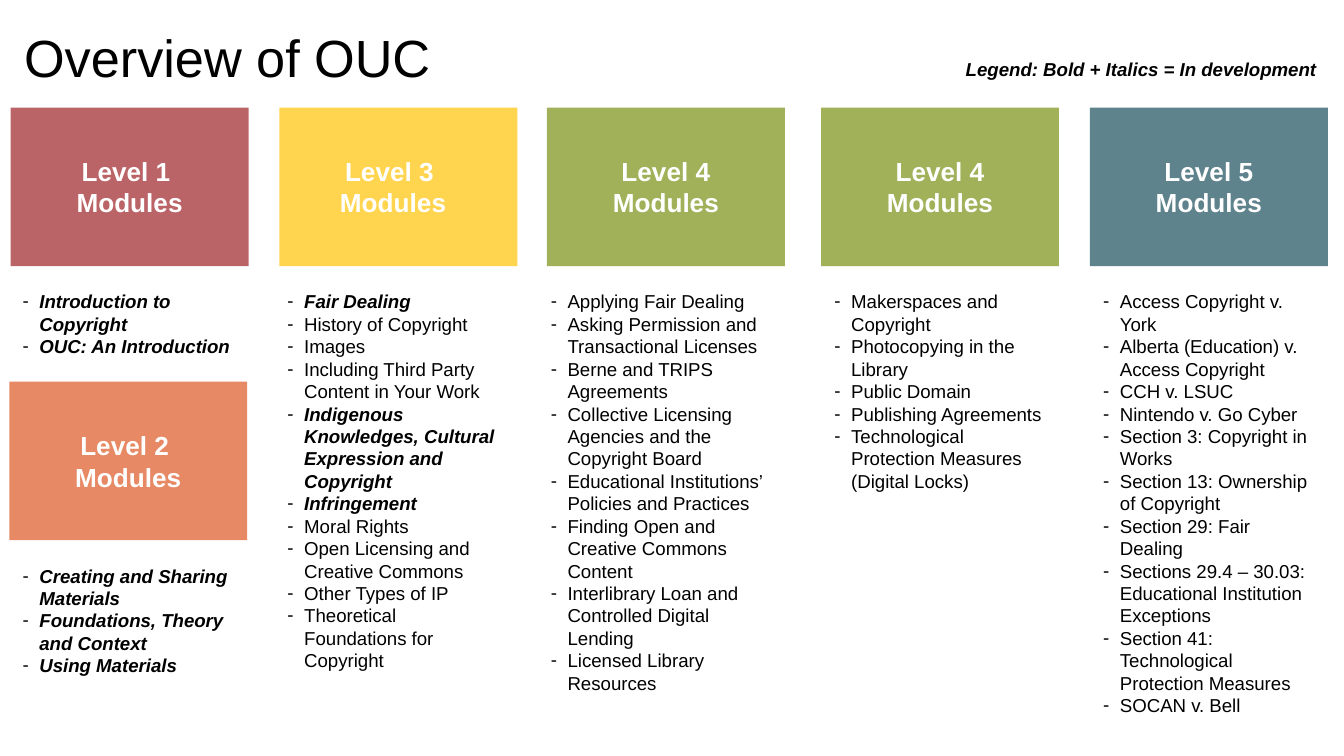
from lxml.etree import SubElement
from pptx import Presentation
from pptx.dml.color import RGBColor
from pptx.enum.shapes import MSO_SHAPE as SHAPE
from pptx.enum.text import MSO_ANCHOR as ANCHOR, PP_ALIGN as ALIGN
from pptx.oxml.ns import qn
from pptx.util import Inches, Pt

COLORS = {
    "text": "000000", "white": "FFFFFF", "red": "BB6468", "orange": "E68964",
    "yellow": "FFD44F", "green": "A0B15A", "blue": "5F838D",
}
SLIDE_W = 10
SLIDE_H = SLIDE_W * 9 / 16
CARD_W, CARD_H = 1.77, 1.18
LABEL_H = 0.67
LIST_GAP = 0.08
ROWS = [0.8, 2.84]
COLS = [0.08, 2.08, 4.07, 6.11, 8.11]
IN_DEVELOPMENT = {
    "Introduction to Copyright", "OUC: An Introduction",
    "Creating and Sharing Materials", "Foundations, Theory and Context",
    "Using Materials", "Fair Dealing", "Infringement",
    "Indigenous Knowledges, Cultural Expression and Copyright",
}
MODULES = [
    dict(level="Level 1 ", col=0, row=0, color="red", list_dx=-0.01, height=0.71, items=[
        "Introduction to Copyright", "OUC: An Introduction"]),
    dict(level="Level 2 ", col=0, row=1, color="orange", card_dx=-0.01, label_dx=-0.01,
         list_dx=-0.01, height=1.04, items=[
             "Creating and Sharing Materials", "Foundations, Theory and Context",
             "Using Materials"]),
    dict(level="Level 3 ", col=1, row=0, color="yellow", label_dx=-0.04, list_dx=-0.04,
         height=3.06, items=[
             "Fair Dealing", "History of Copyright", "Images",
             "Including Third Party Content in Your Work",
             "Indigenous Knowledges, Cultural Expression and Copyright",
             "Infringement", "Moral Rights",
             "Open Licensing and Creative Commons", "Other Types of IP",
             "Theoretical Foundations for Copyright"]),
    dict(level="Level 4", col=2, row=0, color="green", list_dx=-0.07, height=3.4, items=[
        "Applying Fair Dealing", "Asking Permission and Transactional Licenses",
        "Berne and TRIPS Agreements",
        "Collective Licensing Agencies and the Copyright Board",
        "Educational Institutions’ Policies and Practices",
        "Finding Open and Creative Commons Content",
        "Interlibrary Loan and Controlled Digital Lending",
        "Licensed Library Resources"]),
    dict(level="Level 4", col=3, row=0, color="green", height=1.72, items=[
        "Makerspaces and Copyright", "Photocopying in the Library",
        "Public Domain", "Publishing Agreements",
        "Technological Protection Measures (Digital Locks)"]),
    dict(level="Level 5", col=4, row=0, color="blue", height=3.4, items=[
        "Access Copyright v. York", "Alberta (Education) v. Access Copyright",
        "CCH v. LSUC", "Nintendo v. Go Cyber", "Section 3: Copyright in Works",
        "Section 13: Ownership of Copyright", "Section 29: Fair Dealing",
        "Sections 29.4 – 30.03: Educational Institution Exceptions",
        "Section 41: Technological Protection Measures", "SOCAN v. Bell"]),
]


def rgb(name):
    """Return the named colour."""
    return RGBColor.from_string(COLORS[name])


def add_bullet(p):
    """Give a paragraph a hanging dash."""
    pPr = p._p.get_or_add_pPr()
    pPr.set("marL", str(Pt(9)))
    pPr.set("indent", str(Pt(-13.5)))
    clr = SubElement(pPr, qn("a:buClr"))
    SubElement(clr, qn("a:srgbClr"), val=COLORS["text"])
    SubElement(pPr, qn("a:buFont"), typeface="Arial")
    SubElement(pPr, qn("a:buChar"), char="-")


def write(tf, lines, size=10, color="text", align=ALIGN.LEFT, anchor=ANCHOR.TOP,
          bold=False, italic=False, bullets=False, marked=()):
    """Fill a text frame with formatted paragraphs, marked ones in bold italics."""
    tf.word_wrap = True
    tf.vertical_anchor = anchor
    tf.margin_left = tf.margin_right = tf.margin_top = tf.margin_bottom = Inches(0.1)
    for i, line in enumerate(lines):
        p = tf.add_paragraph() if i else tf.paragraphs[0]
        p.alignment = align
        if bullets:
            add_bullet(p)
        r = p.add_run()
        r.text = line
        r.font.name, r.font.size = "Arial", Pt(size)
        r.font.bold = bold or line in marked
        r.font.italic = italic or line in marked
        r.font.color.rgb = rgb(color)


def add_text(slide, x, y, w, h, lines, **fmt):
    """Add a text box."""
    sp = slide.shapes.add_textbox(*map(Inches, (x, y, w, h)))
    write(sp.text_frame, lines, **fmt)


def add_card(slide, x, y, color):
    """Add a plain coloured rectangle."""
    sp = slide.shapes.add_shape(SHAPE.RECTANGLE, *map(Inches, (x, y, CARD_W, CARD_H)))
    sp.shadow.inherit = False
    sp.fill.solid()
    sp.fill.fore_color.rgb = rgb(color)
    sp.line.fill.background()


def add_module(slide, level, col, row, color, height, items,
               card_dx=0, label_dx=0, list_dx=0):
    """Add a level's card, its label and its list of modules."""
    x, y = COLS[col], ROWS[row]
    add_card(slide, x + card_dx, y, color)
    add_text(slide, x + label_dx, y + (CARD_H - LABEL_H) / 2, CARD_W, LABEL_H,
             [level, "Modules"], size=14, color="white", bold=True,
             align=ALIGN.CENTER, anchor=ANCHOR.MIDDLE)
    add_text(slide, x + list_dx, y + CARD_H + LIST_GAP, CARD_W, height, items,
             bullets=True, marked=IN_DEVELOPMENT)


def add_title(slide, text):
    """Place and format the title placeholder."""
    sp = slide.shapes.title
    sp.left, sp.top, sp.width, sp.height = map(Inches, (0.08, 0.09, 9.32, 0.63))
    write(sp.text_frame, [text], size=28)


def main():
    """Build the slide and save it."""
    prs = Presentation()
    prs.slide_width, prs.slide_height = Inches(SLIDE_W), Inches(SLIDE_H)
    slide = prs.slides.add_slide(prs.slide_layouts[5])
    add_title(slide, "Overview of OUC")
    for module in MODULES:
        add_module(slide, **module)
    add_text(slide, 6.96, 0.35, 2.93, 0.37,
             ["Legend: Bold + Italics = In development"],
             align=ALIGN.RIGHT, bold=True, italic=True)
    prs.save("out.pptx")


if __name__ == "__main__":
    main()
